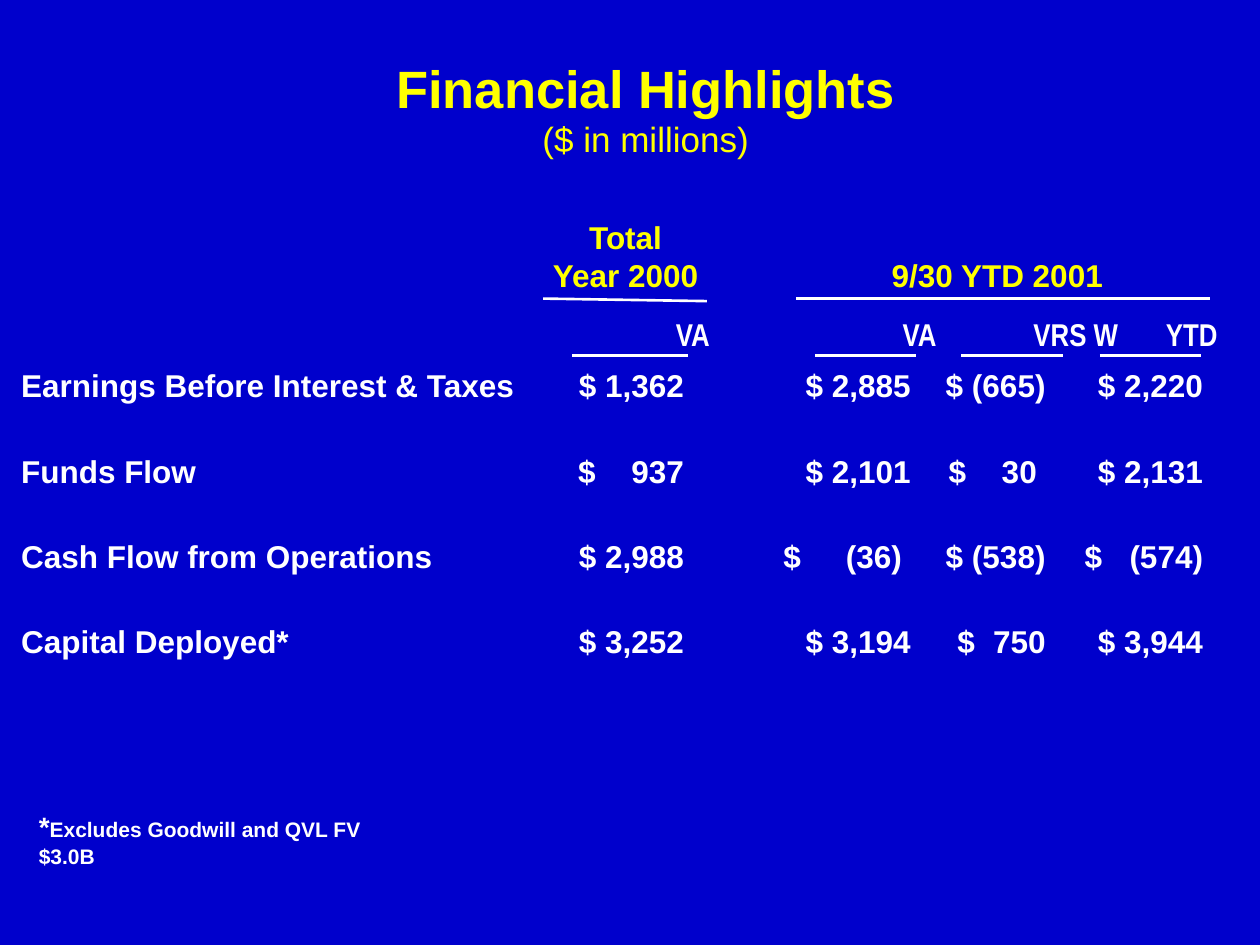
from dataclasses import dataclass
from typing import NamedTuple

from lxml import etree
from pptx import Presentation, util as u
from pptx.dml.color import RGBColor
from pptx.enum import shapes, text
from pptx.oxml.ns import qn

COLS, ROWS = 100, 75  # grid cells across and down the slide
CELL = u.Inches(0.1)


@dataclass(frozen=True)
class Theme:
    back: str = "0000CC"
    accent: str = "FFFF00"
    body: str = "FFFFFF"
    face: str = "Arial"
    narrow: str = "Arial Narrow"
    title: float = 30
    subtitle: float = 20
    text: float = 18
    star: float = 16
    note: float = 12
    rule: float = 1.5


class Box(NamedTuple):
    """Place on the grid, in columns and rows."""
    left: float
    top: float
    width: float
    height: float


class Tab(NamedTuple):
    """Tab stop in columns from the text edge."""
    at: float
    align: str


class Amount(NamedTuple):
    """Figure in a column; a separate dollar sign stands at its own stop."""
    figure: str
    dollar: float | None = None


class Rule(NamedTuple):
    left: float
    right: float
    top: float
    end: float


T = Theme()
EDGES = (52.6, 70.6, 81.3, 93.8)  # right edges of the figures
HEADS = (("VA", 52.7), ("VA", 70.7), ("VRS W", 83.1), ("YTD", 92.3))
FIGURES = {
    "Earnings Before Interest & Taxes": (
        Amount("$ 1,362"), Amount("$ 2,885"), Amount("$ (665)"), Amount("$ 2,220")),
    "Funds Flow": (
        Amount("937", 44.2), Amount("$ 2,101"), Amount("30 ", 73.6), Amount("$ 2,131")),
    "Cash Flow from Operations": (
        Amount("$ 2,988"), Amount("(36) ", 60.5), Amount("$ (538)"), Amount("(574)", 84.4)),
    "Capital Deployed*": (
        Amount("$ 3,252"), Amount("$ 3,194"), Amount("750", 74.3), Amount("$ 3,944")),
}
GROUPS = (
    ("Total\vYear 2000", Box(41.4, 16.8, 16.5, 7)),
    ("9/30 YTD 2001", Box(63.8, 19.8, 30.7, 4)),
)
RULES = (
    Rule(43.1, 56.1, 23.7, 23.9), Rule(63.2, 96, 23.7, 23.7),
    *(Rule(a, b, 28.2, 28.2)
      for a, b in ((45.4, 54.6), (64.7, 72.7), (76.3, 84.4), (87.3, 95.3))),
)


def grid(n: float) -> int:
    return round(n * CELL)


def place(sp, box: Box) -> None:
    for name, value in box._asdict().items():
        setattr(sp, name, grid(value))


def add_box(s, box: Box, **frame):
    sp = s.shapes.add_textbox(*map(grid, box))
    tf = sp.text_frame
    for name, value in {"word_wrap": True, **frame}.items():
        setattr(tf, name, value)
    return tf


def add_run(p, words: str, size: float, color: str, bold: bool = True,
            face: str = T.face) -> None:
    r = p.add_run()
    r.text = words
    for name, value in {"name": face, "size": u.Pt(size), "bold": bold}.items():
        setattr(r.font, name, value)
    r.font.color.rgb = RGBColor.from_string(color)


def format_paragraph(p, **values) -> None:
    for name, value in values.items():
        setattr(p, name, value)


def set_tabs(p, tabs: list[Tab]) -> None:
    stops = etree.SubElement(p._p.get_or_add_pPr(), qn("a:tabLst"))
    for tab in tabs:
        etree.SubElement(stops, qn("a:tab"), pos=str(grid(tab.at)), algn=tab.align)


def add_row(p, label: str, amounts: tuple[Amount, ...]) -> None:
    words, tabs = [label], []
    for amount, edge in zip(amounts, EDGES):
        if amount.dollar is not None:
            words.append("$")
            tabs.append(Tab(amount.dollar, "l"))
        words.append(amount.figure)
        tabs.append(Tab(edge, "r"))
    format_paragraph(p, space_before=u.Pt(25.9), space_after=u.Pt(1.1))
    set_tabs(p, tabs)
    add_run(p, "\t".join(words), T.text, T.body)


def add_rule(s, rule: Rule) -> None:
    line = s.shapes.add_connector(
        shapes.MSO_CONNECTOR.STRAIGHT, grid(rule.left), grid(rule.top),
        grid(rule.right), grid(rule.end))
    line.line.width = u.Pt(T.rule)
    line.line.color.rgb = RGBColor.from_string(T.body)
    etree.SubElement(line._element.spPr, qn("a:effectLst"))


def main() -> None:
    prs = Presentation()
    prs.slide_width, prs.slide_height = grid(COLS), grid(ROWS)
    s = prs.slides.add_slide(prs.slide_layouts[5])
    s.background.fill.solid()
    s.background.fill.fore_color.rgb = RGBColor.from_string(T.back)

    # Title and unit
    place(s.shapes.title, Box(2.5, 4.2, 97.5, 9.2))
    tf = s.shapes.title.text_frame
    tf.auto_size = text.MSO_AUTO_SIZE.NONE
    tf.vertical_anchor = text.MSO_ANCHOR.MIDDLE
    p = tf.paragraphs[0]
    format_paragraph(p, alignment=text.PP_ALIGN.CENTER, line_spacing=0.95)
    add_run(p, "Financial Highlights", T.title, T.accent)
    p.add_line_break()
    add_run(p, "($ in millions)", T.subtitle, T.accent, bold=False)

    # Period headings
    for heading, box in GROUPS:
        p = add_box(s, box).paragraphs[0]
        format_paragraph(p, alignment=text.PP_ALIGN.CENTER, space_before=u.Pt(11.2))
        for i, words in enumerate(heading.split("\v")):
            if i:
                p.add_line_break()
            add_run(p, words, T.text, T.accent)

    # Column headings
    p = add_box(s, Box(1.3, 18.5, 98, 10),
                vertical_anchor=text.MSO_ANCHOR.BOTTOM).paragraphs[0]
    set_tabs(p, [Tab(at, "ctr") for _, at in HEADS])
    add_run(p, "".join(f"\t{head}" for head, _ in HEADS), T.text, T.body, face=T.narrow)

    # Figures
    tf = add_box(s, Box(0.7, 28.6, 99.3, 24.3))
    for i, (label, amounts) in enumerate(FIGURES.items()):
        add_row(tf.add_paragraph() if i else tf.paragraphs[0], label, amounts)

    # Rules under the headings
    for rule in RULES:
        add_rule(s, rule)

    # Footnote
    p = add_box(s, Box(2.1, 63.8, 32.4, 3.7), word_wrap=False).paragraphs[0]
    add_run(p, "*", T.star, T.body)
    add_run(p, "Excludes Goodwill and QVL FV $3.0B", T.note, T.body)

    prs.save("out.pptx")


if __name__ == "__main__":
    main()
